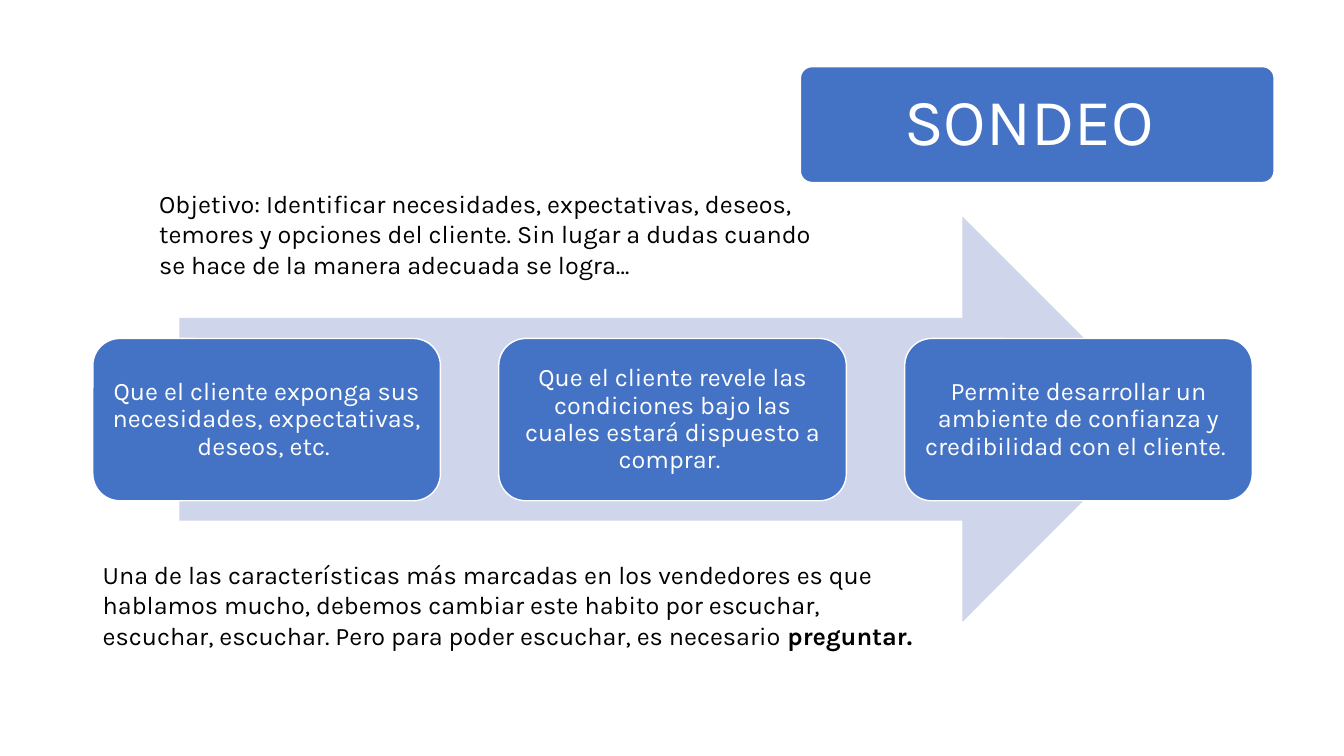
"""Build the SONDEO slide: a title block, an arrow with three steps and two texts."""
from pptx import Presentation
from pptx.dml.color import RGBColor
from pptx.enum.shapes import MSO_SHAPE
from pptx.enum.text import MSO_ANCHOR, MSO_AUTO_SIZE, PP_ALIGN
from pptx.util import Cm, Pt

ROUNDED = MSO_SHAPE.ROUNDED_RECTANGLE
ARROW = MSO_SHAPE.RIGHT_ARROW
MIDDLE = MSO_ANCHOR.MIDDLE
CENTER = PP_ALIGN.CENTER
LEFT = PP_ALIGN.LEFT
GROW = MSO_AUTO_SIZE.SHAPE_TO_FIT_TEXT
BLUE, PALE, WHITE, BLACK = "4472C4", "CFD5EA", "FFFFFF", "000000"


def color(hex_text):
    """Turn a hex string into a colour."""
    return RGBColor.from_string(hex_text)


def write(box, spans, size, ink, align, spacing, inset):
    """Write one paragraph of (text, bold) spans into a box."""
    frame = box.text_frame
    margins = dict(zip(("margin_left", "margin_right", "margin_top", "margin_bottom"), inset))
    for name, value in {"word_wrap": True, **margins}.items():
        setattr(frame, name, value)
    para = frame.paragraphs[0]
    para.alignment = align
    para.line_spacing = spacing
    for text, bold in spans:
        span = para.add_run()
        span.text = text
        for name, value in {"name": "Karla", "size": Pt(size), "bold": bold}.items():
            setattr(span.font, name, value)
        span.font.color.rgb = color(ink)


deck = Presentation()
deck.slide_width, deck.slide_height = Cm(33.87), Cm(19.05)
page = deck.slides.add_slide(deck.slide_layouts[6])

arrow = page.shapes.add_shape(ARROW, Cm(4.52), Cm(5.46), Cm(24.84), Cm(10.21))
arrow.shadow.inherit = False
arrow.fill.solid()
arrow.fill.fore_color.rgb = color(PALE)
arrow.line.fill.background()

steps = [
    "Que el cliente exponga sus necesidades, expectativas, deseos, etc. ",
    "Que el cliente revele las condiciones bajo las cuales estará dispuesto a comprar. ",
    "Permite desarrollar un ambiente de confianza y credibilidad con el cliente. ",
]
blocks = [("SONDEO ", 20.17, 1.68, 11.94, 2.92, 0.1, 47, 0.5)]
for index, step in enumerate(steps):
    blocks.append((step, 2.34 + index * 10.23, 8.53, 8.76, 4.09, 0.1667, 18, 0.18))

for text, left, top, width, height, corner, size, inset in blocks:
    block = page.shapes.add_shape(ROUNDED, Cm(left), Cm(top), Cm(width), Cm(height))
    block.adjustments[0] = corner
    block.shadow.inherit = False
    block.fill.solid()
    block.fill.fore_color.rgb = color(BLUE)
    block.line.color.rgb = color(WHITE)
    block.line.width = Pt(1)
    block.text_frame.vertical_anchor = MIDDLE
    write(block, [(text, False)], size, WHITE, CENTER, 0.9, [Cm(inset)] * 4)

notes = [
    (3.76, 4.62, 17.58, [
        ("Objetivo: Identificar necesidades, expectativas, deseos, temores y opciones del "
         "cliente. Sin lugar a dudas cuando se hace de la manera adecuada se logra…", False),
    ]),
    (2.34, 13.97, 21.41, [
        ("Una de las características más marcadas en los vendedores es que hablamos mucho, "
         "debemos cambiar este habito por escuchar, escuchar, escuchar. Pero para poder "
         "escuchar, es necesario", False),
        (" preguntar.", True),
    ]),
]
for left, top, width, spans in notes:
    note = page.shapes.add_textbox(Cm(left), Cm(top), Cm(width), Cm(2.57))
    note.text_frame.auto_size = GROW
    write(note, spans, 18, BLACK, LEFT, 1.0, [Cm(0.25), Cm(0.25), Cm(0.13), Cm(0.13)])

deck.save("out.pptx")
